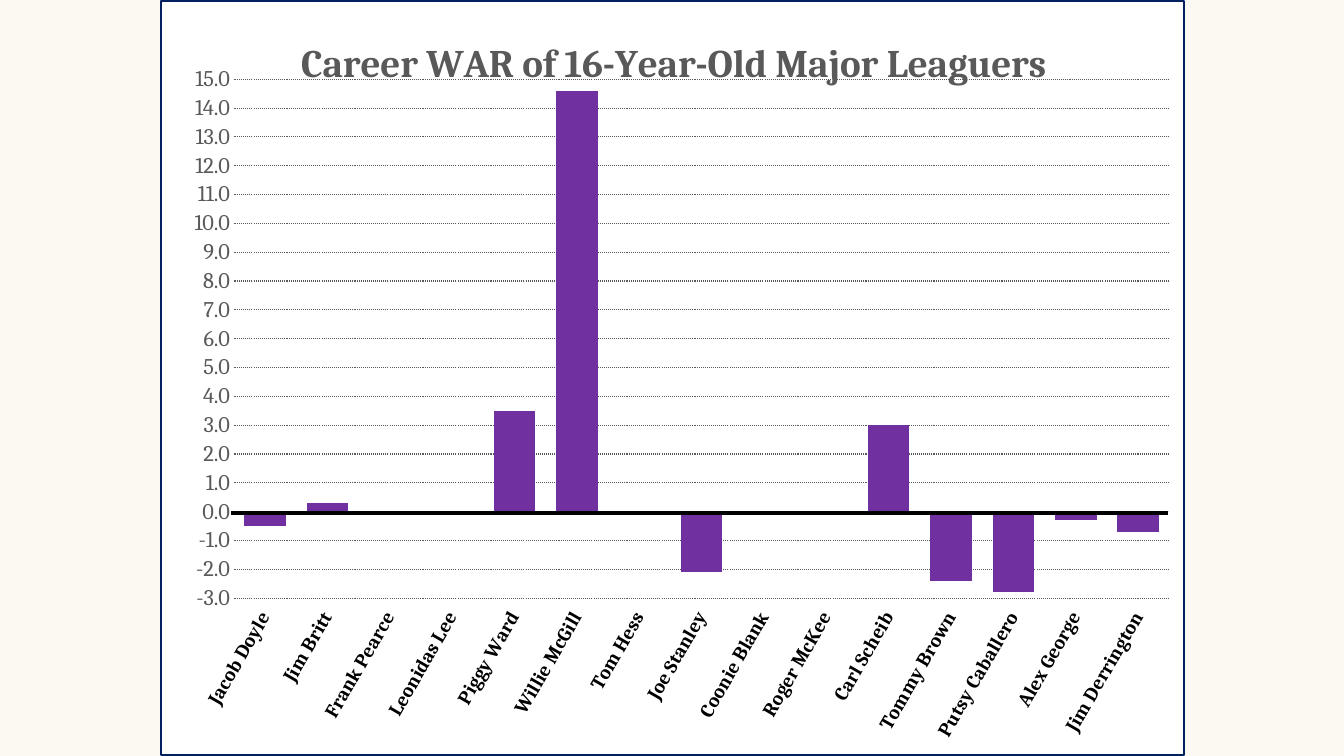
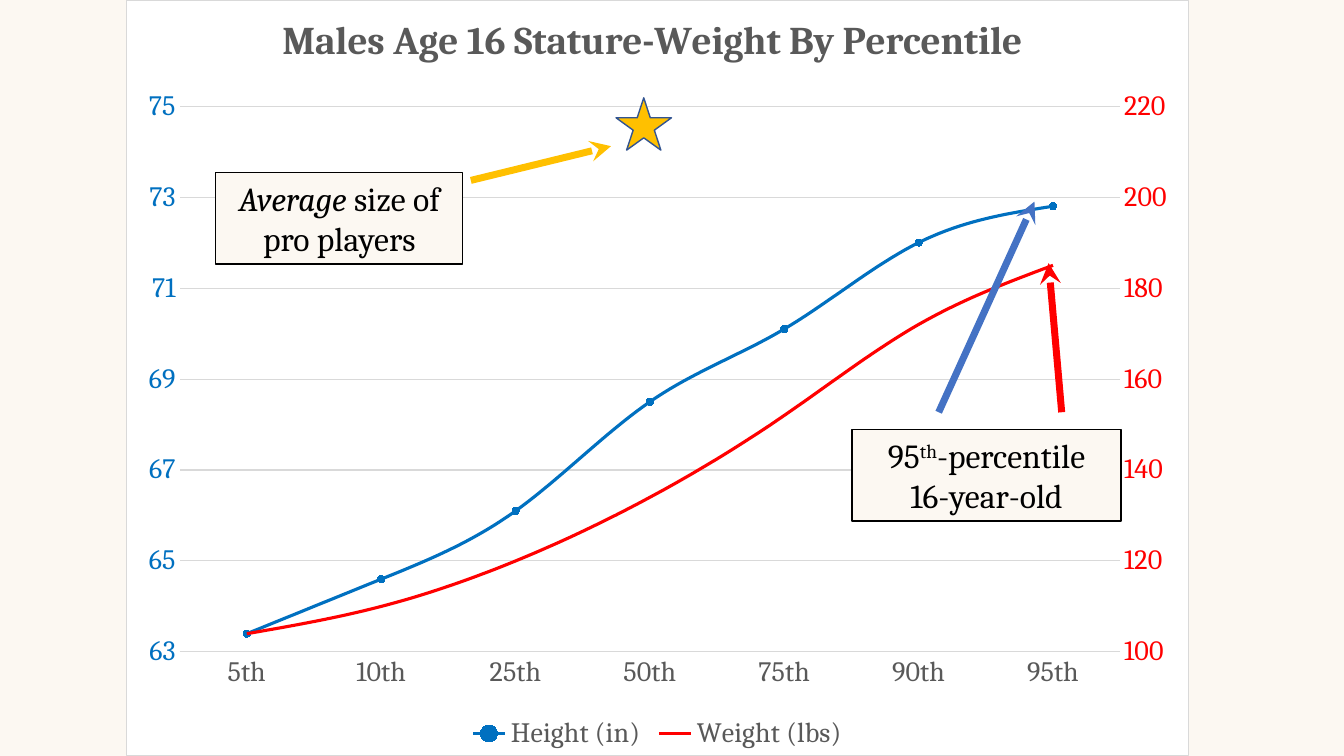
from collections import namedtuple
from copy import deepcopy

from lxml import etree
from pptx import Presentation
from pptx.chart.axis import ValueAxis
from pptx.chart.data import CategoryChartData
from pptx.dml.color import RGBColor
from pptx.enum.chart import (XL_CHART_TYPE, XL_LEGEND_POSITION, XL_MARKER_STYLE,
                             XL_TICK_LABEL_POSITION, XL_TICK_MARK)
from pptx.enum.dml import MSO_LINE
from pptx.enum.shapes import MSO_CONNECTOR, MSO_SHAPE
from pptx.enum.text import MSO_AUTO_SIZE, PP_ALIGN
from pptx.oxml import parse_xml
from pptx.oxml.ns import nsdecls, qn
from pptx.util import Inches, Pt

CREAM, WHITE, BLACK = "FCF8F2", "FFFFFF", "000000"
GRAY, PALE_GRAY, NAVY, PURPLE = "595959", "D9D9D9", "002060", "7030A0"
BLUE, ARROW_BLUE, RED, GOLD, STAR_EDGE = "0070C0", "4472C4", "FF0000", "FFC000", "325491"
FONT = "Cambria"

Box = namedtuple("Box", "left top width height")

WAR_BY_PLAYER = {
    "Jacob Doyle": -0.5, "Jim Britt": 0.3, "Frank Pearce": 0, "Leonidas Lee": 0,
    "Piggy Ward": 3.5, "Willie McGill": 14.6, "Tom Hess": 0, "Joe Stanley": -2.1,
    "Coonie Blank": 0, "Roger McKee": -0.1, "Carl Scheib": 3, "Tommy Brown": -2.4,
    "Putsy Caballero": -2.8, "Alex George": -0.3, "Jim Derrington": -0.7,
}
PERCENTILES = ["5th", "10th", "25th", "50th", "75th", "90th", "95th"]
HEIGHTS = [63.4, 64.6, 66.1, 68.5, 70.1, 72, 72.8]
WEIGHTS = [104, 110, 120, 134, 152, 172, 185]


def rgb(color):
    return RGBColor.from_string(color)


def style_font(font, size, color, bold=False):
    font.name, font.size, font.bold = FONT, Pt(size), bold
    font.color.rgb = rgb(color)


def style_line(line, color, width):
    line.color.rgb = rgb(color)
    line.width = Pt(width)


def set_layout(element, index, left, top, width=None, height=None, inner=False):
    """Place a chart part by fractions of the chart area."""
    for old in element.findall(qn("c:layout")):
        element.remove(old)
    layout = etree.Element(qn("c:layout"))
    manual = etree.SubElement(layout, qn("c:manualLayout"))
    settings = [("layoutTarget", "inner" if inner else None),
                ("xMode", "edge"), ("yMode", "edge"),
                ("x", left), ("y", top), ("w", width), ("h", height)]
    for name, value in settings:
        if value is not None:
            etree.SubElement(manual, qn(f"c:{name}")).set("val", str(value))
    element.insert(index, layout)


def add_chart(slide, box, kind, data, title, title_at, plot_at, border, border_width):
    """Add a white framed chart with a bold title; return the chart."""
    chart = slide.shapes.add_chart(kind, *map(Inches, box), data).chart
    chart.font.name, chart.font.size = "Calibri", Pt(10)
    chart.font.color.rgb = rgb(BLACK)
    chart.has_legend = False
    chart.has_title = True
    paragraph = chart.chart_title.text_frame.paragraphs[0]
    paragraph.text = title
    style_font(paragraph.font, 28, GRAY, bold=True)
    set_layout(chart.chart_title.element, 1, *title_at)
    chart_element = chart.element.find(qn("c:chart"))
    set_layout(chart_element.find(qn("c:plotArea")), 0, *plot_at, inner=True)
    chart_element.addnext(parse_xml(
        f'<c:spPr {nsdecls("c", "a")}>'
        f'<a:solidFill><a:srgbClr val="{WHITE}"/></a:solidFill>'
        f'<a:ln w="{Pt(border_width)}"><a:solidFill><a:srgbClr val="{border}"/>'
        '</a:solidFill></a:ln></c:spPr>'))
    return chart


def style_category_axis(axis, size, color, bold=False):
    axis.major_tick_mark = XL_TICK_MARK.NONE
    style_font(axis.tick_labels.font, size, color, bold)
    style_line(axis.format.line, PALE_GRAY, 0.75)


def style_value_axis(axis, size, color, low, high, step, number_format="0",
                     tick=XL_TICK_MARK.NONE):
    axis.minimum_scale, axis.maximum_scale, axis.major_unit = low, high, step
    axis.major_tick_mark = tick
    axis.tick_labels.number_format = number_format
    axis.tick_labels.number_format_is_linked = False
    style_font(axis.tick_labels.font, size, color)
    axis.format.line.fill.background()


def move_to_right_axis(chart, series_index):
    """Move one series to a second line plot; return its value axis."""
    plot_area = chart.element.find(qn("c:chart")).find(qn("c:plotArea"))
    left_plot = plot_area.find(qn("c:lineChart"))
    right_plot = deepcopy(left_plot)
    left_plot.remove(left_plot.findall(qn("c:ser"))[series_index])
    for index, series in enumerate(right_plot.findall(qn("c:ser"))):
        if index != series_index:
            right_plot.remove(series)
    left_plot.addnext(right_plot)

    category_axis = deepcopy(plot_area.find(qn("c:catAx")))
    value_axis = deepcopy(plot_area.find(qn("c:valAx")))
    category_id, value_id = "50010", "50020"
    for axis_id, value in zip(right_plot.findall(qn("c:axId")), (category_id, value_id)):
        axis_id.set("val", value)
    for axis, own, other in ((category_axis, category_id, value_id),
                             (value_axis, value_id, category_id)):
        axis.find(qn("c:axId")).set("val", own)
        axis.find(qn("c:crossAx")).set("val", other)
    category_axis.find(qn("c:delete")).set("val", "1")
    value_axis.find(qn("c:axPos")).set("val", "r")
    value_axis.find(qn("c:crosses")).set("val", "max")
    plot_area.find(qn("c:valAx")).addnext(value_axis)
    value_axis.addnext(category_axis)
    right_axis = ValueAxis(value_axis)
    right_axis.has_major_gridlines = False
    return right_axis


def add_line(slide, box, start, end, color, width, arrow=False):
    """Draw a line between two points measured from the box corner."""
    points = [Inches(offset + corner) for point in (start, end)
              for offset, corner in zip(point, box)]
    connector = slide.shapes.add_connector(MSO_CONNECTOR.STRAIGHT, *points)
    style_line(connector.line, color, width)
    properties = connector.element.spPr
    if arrow:
        etree.SubElement(properties.find(qn("a:ln")), qn("a:tailEnd")).set("type", "stealth")
    etree.SubElement(properties, qn("a:effectLst"))


def add_shape(slide, box, kind, left, top, width, height, fill, edge):
    shape = slide.shapes.add_shape(kind, Inches(box.left + left), Inches(box.top + top),
                                   Inches(width), Inches(height))
    shape.shadow.inherit = False
    shape.fill.solid()
    shape.fill.fore_color.rgb = rgb(fill)
    style_line(shape.line, edge, 1)
    return shape


def add_callout(slide, box, left, top, width, lines):
    """Add a framed note; each line is a list of (text, style) runs."""
    shape = add_shape(slide, box, MSO_SHAPE.RECTANGLE, left, top, width, 0.91, CREAM, BLACK)
    frame = shape.text_frame
    frame.word_wrap = True
    frame.auto_size = MSO_AUTO_SIZE.SHAPE_TO_FIT_TEXT
    for index, runs in enumerate(lines):
        paragraph = frame.add_paragraph() if index else frame.paragraphs[0]
        paragraph.alignment = PP_ALIGN.CENTER
        style_font(paragraph.font, 24, BLACK)
        for text, style in runs:
            run = paragraph.add_run()
            run.text = text
            if style == "italic":
                run.font.italic = True
            elif style == "superscript":
                run.font._element.set("baseline", "30000")


def add_slide(presentation):
    slide = presentation.slides.add_slide(presentation.slide_layouts[6])
    slide.background.fill.solid()
    slide.background.fill.fore_color.rgb = rgb(CREAM)
    return slide


def build_war_slide(slide, box):
    data = CategoryChartData()
    data.categories = list(WAR_BY_PLAYER)
    data.add_series("Series 1", list(WAR_BY_PLAYER.values()))
    chart = add_chart(slide, box, XL_CHART_TYPE.COLUMN_CLUSTERED, data,
                      "Career WAR of 16-Year-Old Major Leaguers",
                      (0.13, 0.04), (0.071, 0.104, 0.915, 0.688), NAVY, 1.25)
    plot = chart.plots[0]
    plot.gap_width, plot.overlap, plot.vary_by_categories = 50, -27, False
    series = plot.series[0]
    series.invert_if_negative = False
    series.format.fill.solid()
    series.format.fill.fore_color.rgb = rgb(PURPLE)

    names = chart.category_axis
    style_category_axis(names, 14, BLACK, bold=True)
    names.tick_label_position = XL_TICK_LABEL_POSITION.LOW
    label_body = names.format.line and names._element.find(qn("c:txPr")).find(qn("a:bodyPr"))
    label_body.set("rot", "-3600000")
    label_body.set("vert", "horz")
    style_value_axis(chart.value_axis, 16, GRAY, -3, 15, 1, "0.0")
    grid = chart.value_axis.major_gridlines.format.line
    style_line(grid, GRAY, 0)
    grid.dash_style = MSO_LINE.ROUND_DOT
    add_line(slide, box, (0.7, 5.09), (9.99, 5.09), BLACK, 3)


def build_stature_slide(slide, box):
    data = CategoryChartData()
    data.categories = PERCENTILES
    data.add_series("Height (in)", HEIGHTS)
    data.add_series("Weight (lbs)", WEIGHTS)
    chart = add_chart(slide, box, XL_CHART_TYPE.LINE_MARKERS, data,
                      "Males Age 16 Stature-Weight By Percentile",
                      (0.14, 0.01), (0.05, 0.14, 0.886, 0.723), PALE_GRAY, 0.75)
    chart.has_legend = True
    chart.legend.position = XL_LEGEND_POSITION.BOTTOM
    chart.legend.include_in_layout = False
    style_font(chart.legend.font, 20, GRAY)

    plot = chart.plots[0]
    plot.vary_by_categories = False
    height, weight = plot.series
    for series, color in ((height, BLUE), (weight, RED)):
        series.smooth = True
        style_line(series.format.line, color, 2.25)
    height.marker.style, height.marker.size = XL_MARKER_STYLE.CIRCLE, 5
    height.marker.format.fill.solid()
    height.marker.format.fill.fore_color.rgb = rgb(BLUE)
    style_line(height.marker.format.line, BLUE, 0.75)
    weight.marker.style = XL_MARKER_STYLE.NONE

    style_category_axis(chart.category_axis, 20, GRAY)
    style_value_axis(chart.value_axis, 20, BLUE, 63, 75, 2)
    style_line(chart.value_axis.major_gridlines.format.line, PALE_GRAY, 0.75)
    style_value_axis(move_to_right_axis(chart, 1), 20, RED, 100, 220, 20,
                     tick=XL_TICK_MARK.INSIDE)

    add_line(slide, box, (8.06, 4.09), (9.01, 2), ARROW_BLUE, 5, arrow=True)
    add_line(slide, box, (9.28, 4.09), (9.15, 2.61), RED, 5, arrow=True)
    add_callout(slide, box, 7.2, 4.26, 2.67,
                [[("95", None), ("th", "superscript"), ("-percentile", None)],
                 [("16-year-old", None)]])
    add_line(slide, box, (3.42, 1.79), (4.81, 1.45), GOLD, 5, arrow=True)
    add_shape(slide, box, MSO_SHAPE.STAR_5_POINT, 4.86, 0.97, 0.55, 0.52, GOLD, STAR_EDGE)
    add_callout(slide, box, 0.89, 1.71, 2.45,
                [[("Average", "italic"), (" size of pro players", None)]])


def main():
    presentation = Presentation()
    presentation.slide_width, presentation.slide_height = Inches(13.33), Inches(7.5)
    build_war_slide(add_slide(presentation), Box(1.59, 0, 10.16, 7.5))
    build_stature_slide(add_slide(presentation), Box(1.25, 0, 10.54, 7.5))
    presentation.save("out.pptx")


if __name__ == "__main__":
    main()
